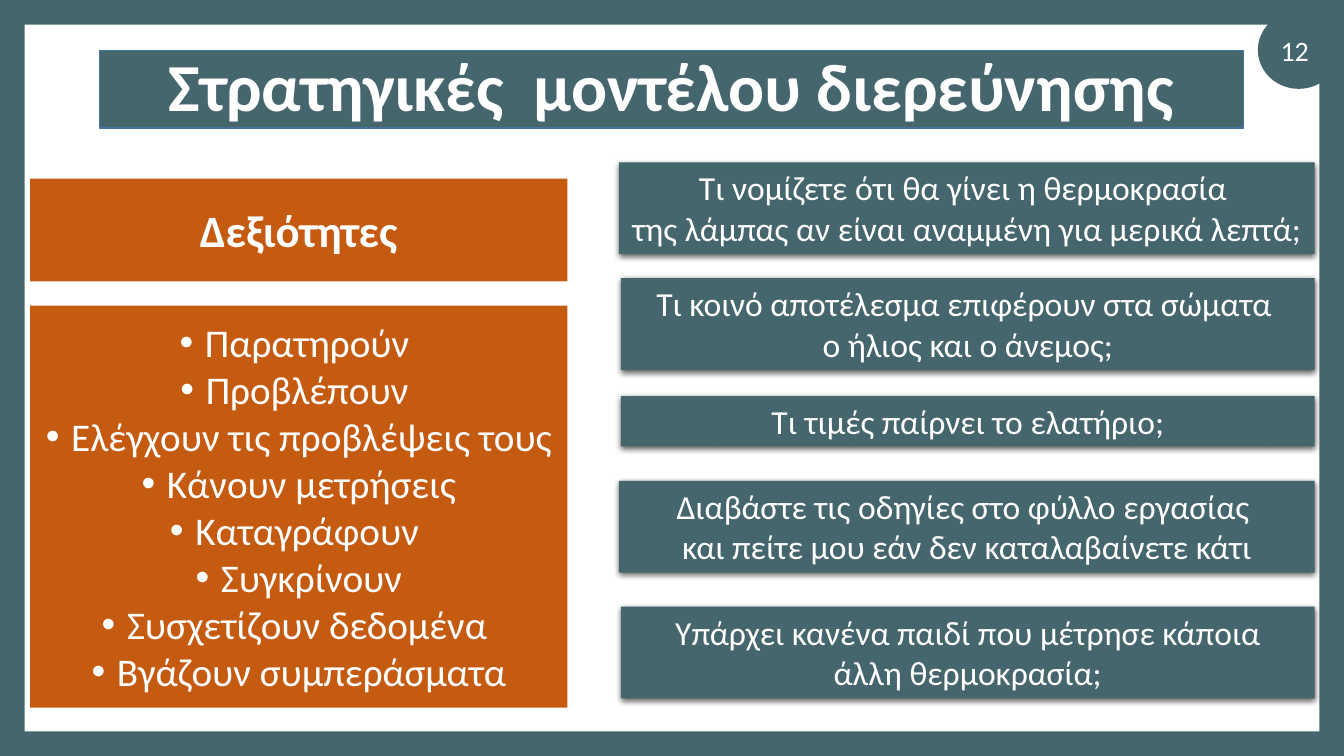
import pptx
import pptx.dml.color
import pptx.enum.shapes
import pptx.enum.text
import pptx.oxml
import pptx.oxml.ns
import pptx.util

Cm = pptx.util.Cm
Pt = pptx.util.Pt
SHAPES = pptx.enum.shapes.MSO_SHAPE
ANCHOR = pptx.enum.text.MSO_ANCHOR

TEAL = "46666D"
ORANGE = "C55A11"
WHITE = "FFFFFF"
TITLE_EDGE = "43739E"

SLIDE_WIDTH, SLIDE_HEIGHT = 33.87, 19.05
FRAME = 0.62
SKILLS_LEFT, SKILLS_WIDTH = 0.76, 13.54
QUESTIONS_RIGHT = 33.13
BULLET_INDENT = 0.64

SKILLS = [
    "Παρατηρούν ",
    "Προβλέπουν ",
    "Ελέγχουν τις προβλέψεις τους",
    "Κάνουν μετρήσεις",
    "Καταγράφουν ",
    "Συγκρίνουν",
    "Συσχετίζουν δεδομένα ",
    "Βγάζουν συμπεράσματα",
]

# left, top, lines
QUESTIONS = [
    (15.6, 4.09, ["Τι νομίζετε ότι θα γίνει η θερμοκρασία ",
                  "της λάμπας αν είναι αναμμένη για μερικά λεπτά;"]),
    (15.65, 7.01, ["Τι κοινό αποτέλεσμα επιφέρουν στα σώματα ",
                   "ο ήλιος και ο άνεμος;"]),
    (15.65, 9.98, ["Τι τιμές παίρνει το ελατήριο;"]),
    (15.6, 12.12, ["Διαβάστε τις οδηγίες στο φύλλο εργασίας ",
                   "και πείτε μου εάν δεν καταλαβαίνετε κάτι"]),
    (15.65, 15.29, ["Υπάρχει κανένα παιδί που μέτρησε κάποια",
                    "άλλη θερμοκρασία;"]),
]


def rgb(hex_colour):
    return pptx.dml.color.RGBColor.from_string(hex_colour)


def paint(shape, fill, line=None):
    shape.fill.solid()
    shape.fill.fore_color.rgb = rgb(fill)
    if line:
        shape.line.color.rgb = rgb(line)
        shape.line.width = Pt(1)
    else:
        shape.line.fill.background()


def place(shape, left, top, width, height):
    shape.left, shape.top = Cm(left), Cm(top)
    shape.width, shape.height = Cm(width), Cm(height)


def add_block(slide, left, top, width, height, fill, kind=SHAPES.RECTANGLE):
    block = slide.shapes.add_shape(kind, Cm(left), Cm(top), Cm(width), Cm(height))
    block.shadow.inherit = False
    paint(block, fill)
    return block


def write(shape, lines, size, bold=False, anchor=ANCHOR.MIDDLE, wrap=True,
          spacing=1.0, before=0, bullets=False):
    """Fill the shape with one centred white paragraph per line."""
    frame = shape.text_frame
    frame.auto_size = pptx.enum.text.MSO_AUTO_SIZE.NONE
    frame.word_wrap = wrap
    frame.vertical_anchor = anchor
    for number, line in enumerate(lines):
        paragraph = frame.add_paragraph() if number else frame.paragraphs[0]
        paragraph.alignment = pptx.enum.text.PP_ALIGN.CENTER
        paragraph.line_spacing = spacing
        paragraph.space_before = Pt(before)
        run = paragraph.add_run()
        run.text = line
        run.font.name = "Calibri"
        run.font.size = Pt(size)
        run.font.bold = bold
        run.font.color.rgb = rgb(WHITE)
        if bullets:
            add_bullet(paragraph)


def add_bullet(paragraph):
    properties = paragraph._p.get_or_add_pPr()
    properties.set("marL", str(Cm(BULLET_INDENT)))
    properties.set("indent", str(-Cm(BULLET_INDENT)))
    namespace = pptx.oxml.ns.nsdecls("a")
    properties.append(pptx.oxml.parse_xml(
        f'<a:buFont {namespace} typeface="Arial"/>'))
    properties.append(pptx.oxml.parse_xml(f'<a:buChar {namespace} char="•"/>'))


def add_drop_shadow(shape):
    effects = shape._element.spPr.find(pptx.oxml.ns.qn("a:effectLst"))
    effects.append(pptx.oxml.parse_xml(
        f'<a:outerShdw {pptx.oxml.ns.nsdecls("a")} blurRad="{Pt(4.5)}" '
        f'dist="{Pt(1.5)}" dir="5400000" algn="ctr" rotWithShape="0">'
        '<a:srgbClr val="000000"><a:alpha val="63000"/></a:srgbClr>'
        '</a:outerShdw>'))


def add_frame(slide):
    right, bottom = SLIDE_WIDTH - FRAME, SLIDE_HEIGHT - FRAME
    for left, top, width, height in [
        (0, 0, SLIDE_WIDTH, FRAME),
        (0, bottom, SLIDE_WIDTH, FRAME),
        (0, 0, FRAME, SLIDE_HEIGHT),
        (right, 0, FRAME, SLIDE_HEIGHT),
    ]:
        add_block(slide, left, top, width, height, TEAL)


def add_page_number(slide, number):
    add_block(slide, 31.7, 0.28, 2.06, 1.96, TEAL, SHAPES.OVAL)
    label = slide.shapes.add_textbox(Cm(31.6), Cm(0.76), Cm(2.06), Cm(1.02))
    write(label, [number], 20)


def add_question(slide, left, top, lines):
    height = 0.23 + 1.04 * len(lines)
    card = add_block(slide, left, top, QUESTIONS_RIGHT - left, height, TEAL)
    add_drop_shadow(card)
    write(card, lines, 24, anchor=ANCHOR.TOP, wrap=False)


def main():
    deck = pptx.Presentation()
    deck.slide_width, deck.slide_height = Cm(SLIDE_WIDTH), Cm(SLIDE_HEIGHT)
    slide = deck.slides.add_slide(deck.slide_layouts[1])
    add_frame(slide)
    add_page_number(slide, "12")

    title = slide.shapes.title
    place(title, 2.51, 1.27, 28.83, 1.96)
    paint(title, TEAL, TITLE_EDGE)
    write(title, ["Στρατηγικές  μοντέλου διερεύνησης"], 48, bold=True,
          spacing=0.9, before=10)

    heading = add_block(slide, SKILLS_LEFT, 4.5, SKILLS_WIDTH, 2.59, ORANGE)
    write(heading, ["Δεξιότητες"], 32, bold=True)

    skills = slide.placeholders[1]
    place(skills, SKILLS_LEFT, 7.7, SKILLS_WIDTH, 10.13)
    paint(skills, ORANGE)
    write(skills, SKILLS, 28, bullets=True)

    for left, top, lines in QUESTIONS:
        add_question(slide, left, top, lines)

    deck.save("out.pptx")


if __name__ == "__main__":
    main()
